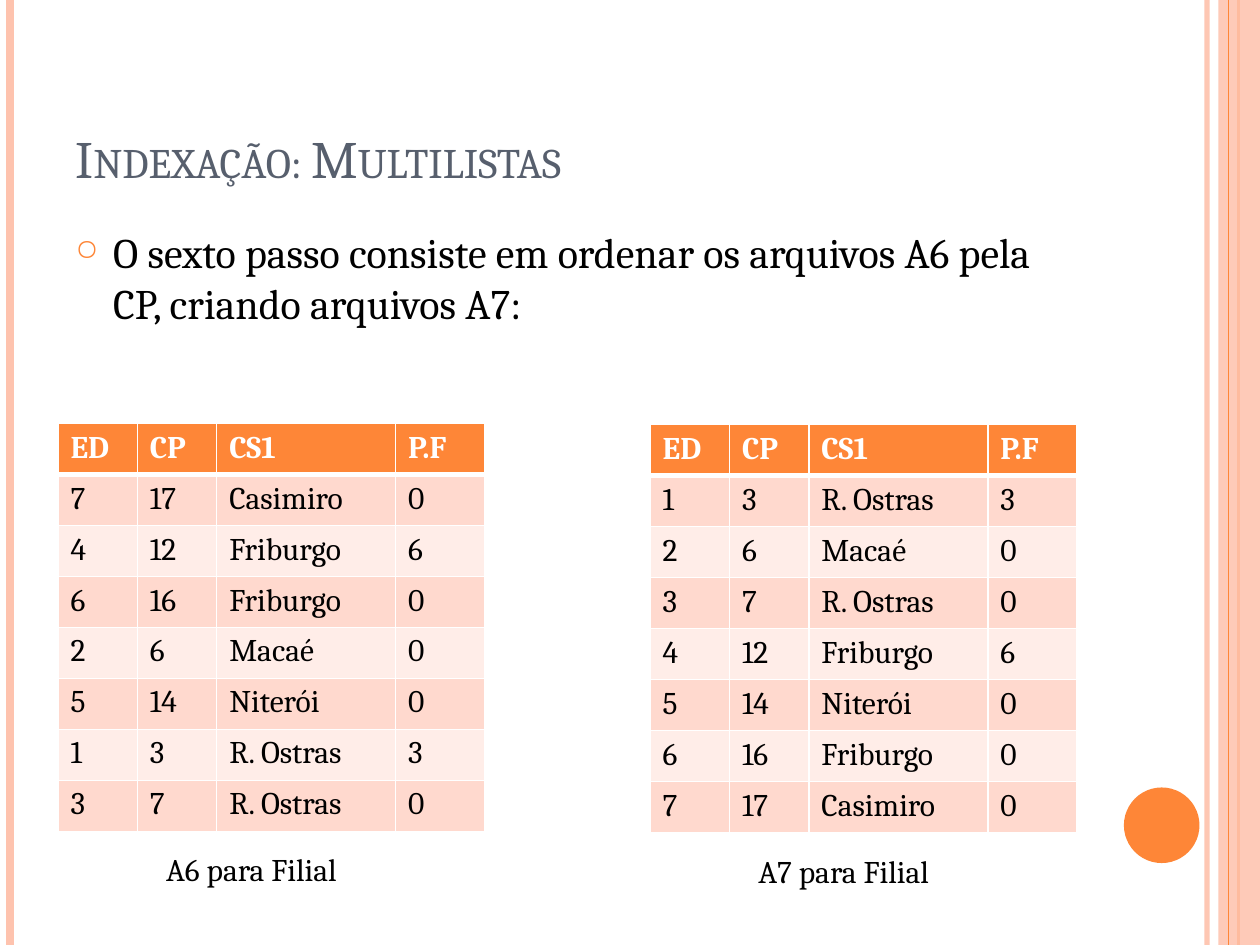
from dataclasses import dataclass

import pptx
import pptx.dml.color
import pptx.enum.shapes
import pptx.enum.text
import pptx.oxml
import pptx.oxml.ns
import pptx.util
from lxml import etree


@dataclass(frozen=True)
class Theme:
    font: str = "Cambria"
    accent: str = "FE8637"
    accent_pale: str = "FEC3AE"
    heading: str = "575F6D"
    ink: str = "000000"
    paper: str = "FFFFFF"
    bands: tuple[str, str] = ("FFD9CE", "FFEDE8")
    title_size: int = 30
    body_size: int = 24
    small_size: int = 18


@dataclass(frozen=True)
class Stripe:
    column: float
    color: str
    weight: float
    opacity: int = 100


@dataclass(frozen=True)
class Box:
    column: float
    row: float
    columns: float
    rows: float


@dataclass(frozen=True)
class FileTable:
    caption: str
    column: float
    row: float
    records: list[tuple[str, ...]]


THEME = Theme()
GRID_COLUMNS, GRID_ROWS = 100, 75

prs = pptx.Presentation()
prs.slide_width = pptx.util.Inches(10)
prs.slide_height = pptx.util.Inches(7.5)
slide = prs.slides.add_slide(prs.slide_layouts[6])

FIELDS = ("ED", "CP", "CS1", "P.F")
FIELD_COLUMNS = (6.3, 6.3, 14.2, 7.1)
RECORD_ROWS = 4.05
A6 = [
    ("7", "17", "Casimiro", "0"),
    ("4", "12", "Friburgo", "6"),
    ("6", "16", "Friburgo", "0"),
    ("2", "6", "Macaé", "0"),
    ("5", "14", "Niterói", "0"),
    ("1", "3", "R. Ostras", "3"),
    ("3", "7", "R. Ostras", "0"),
]
A7 = sorted(A6, key=lambda record: int(record[1]))
FILES = [
    FileTable("A6 para Filial", 4.6, 33.6, A6),
    FileTable("A7 para Filial", 51.6, 33.7, A7),
]


def across(columns: float) -> int:
    return round(prs.slide_width * columns / GRID_COLUMNS)


def down(rows: float) -> int:
    return round(prs.slide_height * rows / GRID_ROWS)


def place(box: Box) -> tuple[int, int, int, int]:
    return across(box.column), down(box.row), across(box.columns), down(box.rows)


def rgb(color: str) -> pptx.dml.color.RGBColor:
    return pptx.dml.color.RGBColor.from_string(color)


def set_opacity(parent: etree._Element, percent: int) -> None:
    color = next(parent.iter(pptx.oxml.ns.qn("a:srgbClr")))
    etree.SubElement(color, pptx.oxml.ns.qn("a:alpha"), val=str(percent * 1000))


def draw_stripe(stripe: Stripe) -> None:
    x = across(stripe.column)
    line = slide.shapes.add_connector(
        pptx.enum.shapes.MSO_CONNECTOR.STRAIGHT, x, 0, x, prs.slide_height)
    line.line.color.rgb = rgb(stripe.color)
    line.line.width = pptx.util.Pt(stripe.weight)
    properties = line._element.spPr
    if stripe.opacity < 100:
        set_opacity(properties, stripe.opacity)
    etree.SubElement(properties, pptx.oxml.ns.qn("a:effectLst"))


def draw_solid(preset: pptx.enum.shapes.MSO_SHAPE, box: Box, color: str, opacity: int = 100) -> None:
    solid = slide.shapes.add_shape(preset, *place(box))
    solid.shadow.inherit = False
    solid.fill.solid()
    solid.fill.fore_color.rgb = rgb(color)
    solid.line.fill.background()
    if opacity < 100:
        set_opacity(solid._element.spPr, opacity)


def add_run(paragraph, text: str, size: int, color: str, bold: bool = False):
    run = paragraph.add_run()
    run.text = text
    run.font.name = THEME.font
    run.font.size = pptx.util.Pt(size)
    run.font.color.rgb = rgb(color)
    run.font.bold = bold
    return run


def add_frame(box: Box, wrap: bool = True):
    frame = slide.shapes.add_textbox(*place(box)).text_frame
    frame.word_wrap = wrap
    return frame


def draw_title(text: str) -> None:
    frame = add_frame(Box(5, 3, 81.7, 12.5))
    frame.vertical_anchor = pptx.enum.text.MSO_ANCHOR.BOTTOM
    run = add_run(frame.paragraphs[0], text, THEME.title_size, THEME.heading)
    run.font._element.set("cap", "small")


def draw_bullet(text: str) -> None:
    paragraph = add_frame(Box(5, 17.5, 81.7, 10.6)).paragraphs[0]
    paragraph.space_before = pptx.util.Pt(6)
    add_run(paragraph, text, THEME.body_size, THEME.ink)
    properties = paragraph._element.get_or_add_pPr()
    properties.set("marL", str(across(3)))
    properties.set("indent", str(-across(3)))
    bullet_color = etree.SubElement(properties, pptx.oxml.ns.qn("a:buClr"))
    etree.SubElement(bullet_color, pptx.oxml.ns.qn("a:srgbClr"), val=THEME.accent)
    etree.SubElement(properties, pptx.oxml.ns.qn("a:buSzPct"), val="70000")
    etree.SubElement(properties, pptx.oxml.ns.qn("a:buChar"), char="○")


def set_borders(cell, weights: dict[str, float]) -> None:
    """Border the given sides (L, R, T, B, in that order) with weights in points."""
    properties = cell._tc.get_or_add_tcPr()
    for position, (side, weight) in enumerate(weights.items()):
        border = pptx.oxml.parse_xml(
            f'<a:ln{side} {pptx.oxml.ns.nsdecls("a")} w="{pptx.util.Pt(weight)}">'
            f'<a:solidFill><a:srgbClr val="{THEME.paper}"/></a:solidFill></a:ln{side}>')
        properties.insert(position, border)


def draw_file(file: FileTable) -> None:
    lines = [FIELDS, *file.records]
    box = Box(file.column, file.row, sum(FIELD_COLUMNS), RECORD_ROWS * len(lines))
    table = slide.shapes.add_table(len(lines), len(FIELDS), *place(box)).table
    for field, columns in zip(table.columns, FIELD_COLUMNS):
        field.width = across(columns)
    for r, values in enumerate(lines):
        header = r == 0
        table.rows[r].height = down(RECORD_ROWS)
        for c, value in enumerate(values):
            cell = table.cell(r, c)
            cell.fill.solid()
            cell.fill.fore_color.rgb = rgb(THEME.accent if header else THEME.bands[(r - 1) % 2])
            add_run(cell.text_frame.paragraphs[0], value, THEME.small_size,
                    THEME.paper if header else THEME.ink, bold=header)
            set_borders(cell, {"L": 1, "R": 1, "T": 1, "B": 3} if header
                        else {"L": 1, "R": 1, "B": 1})
    caption = add_frame(Box(file.column + 7.6, file.row + 33.4, 18.3, 4), wrap=False)
    caption.auto_size = pptx.enum.text.MSO_AUTO_SIZE.SHAPE_TO_FIT_TEXT
    add_run(caption.paragraphs[0], file.caption, THEME.small_size, THEME.ink)


def main() -> None:
    for stripe in (Stripe(95.8, THEME.accent_pale, 3, 93),
                   Stripe(0.8, THEME.accent_pale, 4.5),
                   Stripe(98.3, THEME.accent, 1.5)):
        draw_stripe(stripe)
    preset = pptx.enum.shapes.MSO_SHAPE
    draw_solid(preset.RECTANGLE, Box(96.7, 0, 3.3, GRID_ROWS), THEME.accent_pale, 87)
    draw_stripe(Stripe(97.5, THEME.accent, 0.75))
    draw_solid(preset.OVAL, Box(89.2, 62.5, 6, 6), THEME.accent)
    draw_title("Indexação: Multilistas")
    draw_bullet("O sexto passo consiste em ordenar os arquivos A6 pela CP, criando arquivos A7:")
    for file in FILES:
        draw_file(file)
    prs.save("out.pptx")


if __name__ == "__main__":
    main()
